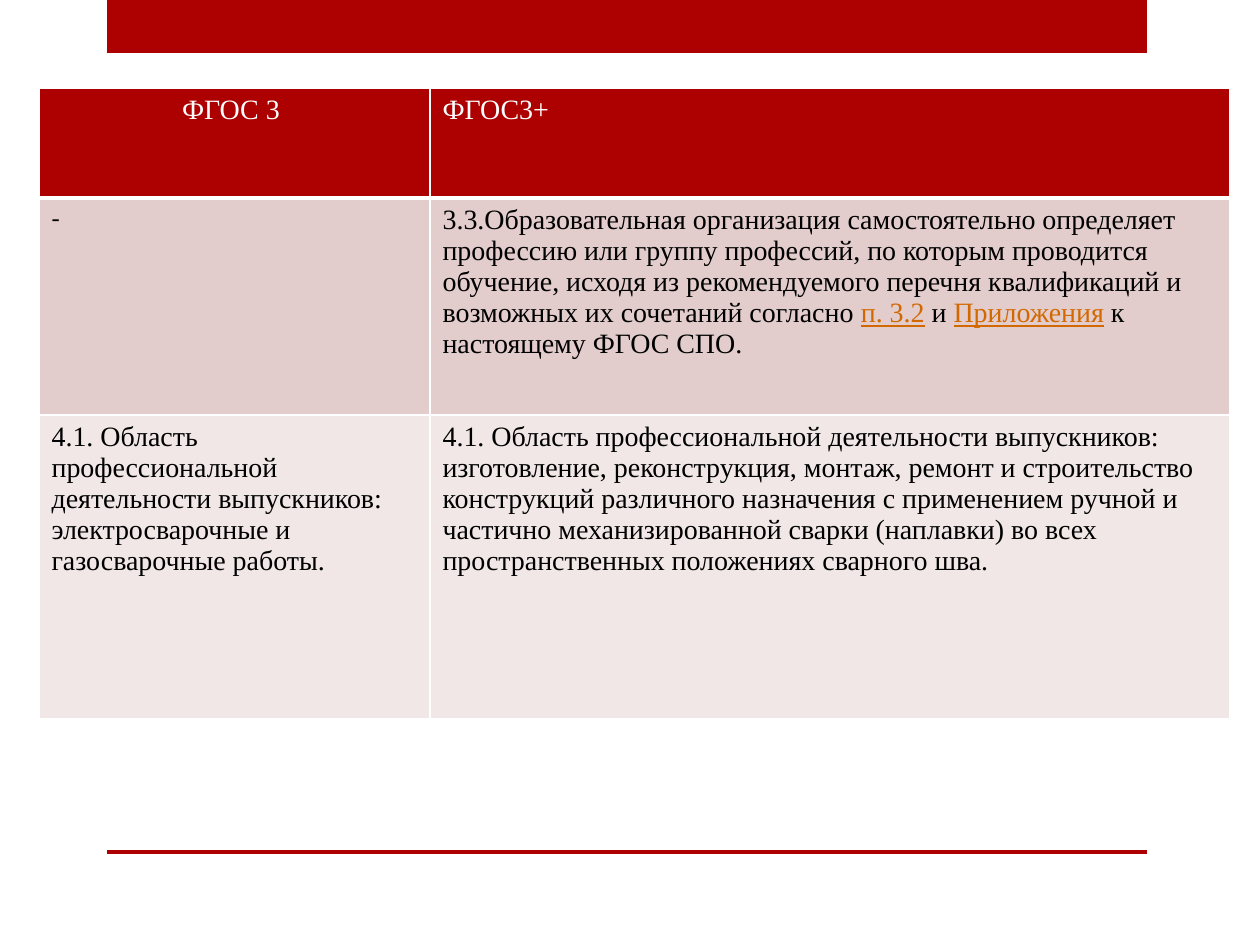
from dataclasses import dataclass

from lxml.etree import SubElement
from pptx import Presentation
from pptx.dml.color import RGBColor as RGB
from pptx.enum.shapes import MSO_SHAPE as SHAPE
from pptx.enum.text import PP_ALIGN as ALIGN
from pptx.oxml import parse_xml
from pptx.oxml.ns import nsdecls, qn
from pptx.util import Emu, Pt


@dataclass(frozen=True)
class Theme:
    font: str = "Times New Roman"
    text_size: int = 16
    dash_size: int = 14
    accent: str = "AD0101"
    white: str = "FFFFFF"
    black: str = "000000"
    link: str = "D26900"
    row_fills: tuple = ("AD0101", "E3CCCC", "F1E7E7")
    thin: int = 1
    thick: int = 3


THEME = Theme()
PX_PER_INCH = 126

COLUMNS = (391, 800)
ROWS = (110, 217, 304)

# Each cell is a list of runs: (text, is it a reference)
CELLS = (
    ([("ФГОС 3 ", False)], [("ФГОС3+", False)]),
    (
        [("-", False)],
        [
            ("3.3.Образовательная организация самостоятельно определяет "
             "профессию или группу профессий, по которым проводится обучение, "
             "исходя из рекомендуемого перечня квалификаций и возможных их "
             "сочетаний согласно ", False),
            ("п. 3.2", True),
            (" и ", False),
            ("Приложения", True),
            (" к настоящему ФГОС СПО.", False),
        ],
    ),
    (
        [("4.1. Область профессиональной деятельности выпускников: "
          "электросварочные и газосварочные работы.", False)],
        [("4.1. Область профессиональной деятельности выпускников: "
          "изготовление, реконструкция, монтаж, ремонт и строительство "
          "конструкций различного назначения с применением ручной и частично "
          "механизированной сварки (наплавки) во всех пространственных "
          "положениях сварного шва.", False)],
    ),
)


def px(n):
    return Emu(round(n * 914400 / PX_PER_INCH))


def add_bar(slide, left, top, width, height):
    s = slide.shapes.add_shape(SHAPE.RECTANGLE, px(left), px(top), px(width), px(height))
    s.shadow.inherit = False
    s.fill.solid()
    s.fill.fore_color.rgb = RGB.from_string(THEME.accent)
    s.line.fill.background()


def set_borders(cell, top, bottom):
    """Draw white borders; they precede the fill in the cell properties."""
    tc_pr = cell._tc.get_or_add_tcPr()
    widths = {"lnL": THEME.thin, "lnR": THEME.thin, "lnT": top, "lnB": bottom}
    for i, (tag, width) in enumerate(widths.items()):
        ln = parse_xml(f'<a:{tag} {nsdecls("a")} w="{Pt(width)}"/>')
        fill = SubElement(ln, qn("a:solidFill"))
        SubElement(fill, qn("a:srgbClr"), val=THEME.white)
        tc_pr.insert(i, ln)


def add_run(p, text, size, color, underline=False):
    r = p.add_run()
    r.text = text
    r.font.name = THEME.font
    r.font.size = Pt(size)
    r.font.bold = False
    r.font.underline = underline
    r.font.color.rgb = RGB.from_string(color)


def fill_cell(cell, runs, row):
    header = row == 0
    cell.fill.solid()
    cell.fill.fore_color.rgb = RGB.from_string(THEME.row_fills[row])
    set_borders(
        cell,
        top=THEME.thick if row == 1 else THEME.thin,
        bottom=THEME.thick if header else THEME.thin,
    )
    p = cell.text_frame.paragraphs[0]
    for text, is_reference in runs:
        size = THEME.dash_size if text == "-" else THEME.text_size
        color = THEME.white if header else THEME.link if is_reference else THEME.black
        add_run(p, text, size, color, is_reference)


def add_comparison(slide, left, top):
    frame = slide.shapes.add_table(
        len(ROWS), len(COLUMNS), px(left), px(top), px(sum(COLUMNS)), px(sum(ROWS)))
    table = frame.table
    for column, width in zip(table.columns, COLUMNS):
        column.width = px(width)
    for i, height in enumerate(ROWS):
        table.rows[i].height = px(height)
        for j, runs in enumerate(CELLS[i]):
            fill_cell(table.cell(i, j), runs, i)
    table.cell(0, 0).text_frame.paragraphs[0].alignment = ALIGN.CENTER


def main():
    prs = Presentation()
    prs.slide_width, prs.slide_height = px(1260), px(945)
    slide = prs.slides.add_slide(prs.slide_layouts[6])

    # Top band and bottom rule
    add_bar(slide, 107, 0, 1040, 53)
    add_bar(slide, 107, 850, 1040, 4)

    # Comparison of the two standards
    add_comparison(slide, 39, 88)

    prs.save("out.pptx")


if __name__ == "__main__":
    main()
